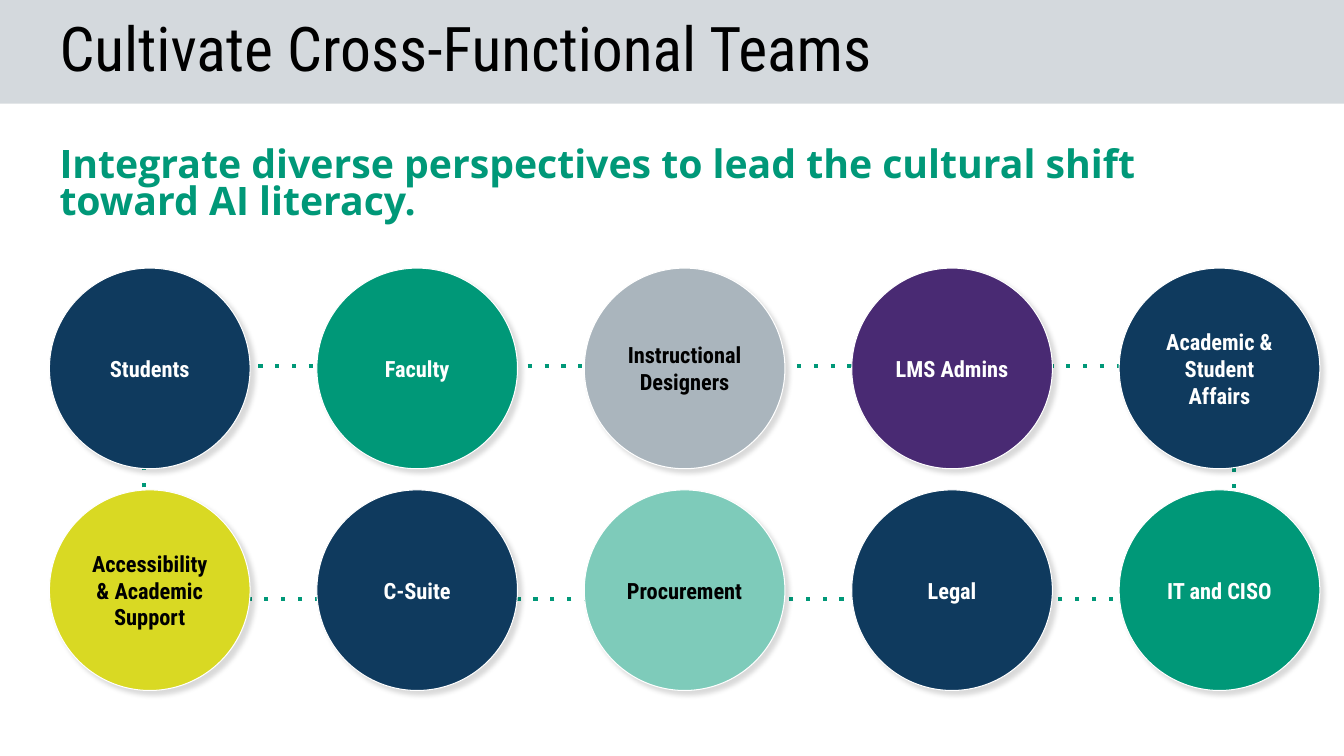
from lxml.etree import SubElement as Sub
from pptx import Presentation
from pptx.dml.color import RGBColor
from pptx.enum.dml import MSO_LINE as Dash
from pptx.enum.shapes import MSO_SHAPE as Kind
from pptx.enum.text import MSO_ANCHOR as Anchor, MSO_AUTO_SIZE as Fit, PP_ALIGN as Align
from pptx.oxml.ns import qn
from pptx.util import Pt

SCALE = 9144
NAVY, GREEN, GRAY, PURPLE = "0F3A5E", "009878", "AAB5BD", "492A73"
LIME, MINT, BLACK, WHITE = "D9D923", "7ECBBA", "000000", "FFFFFF"
HEAD, BODY = "Roboto Condensed", "Open Sans"
TEAMS = [
    [("Students", NAVY, WHITE), ("Faculty", GREEN, WHITE),
     ("Instructional Designers", GRAY, BLACK), ("LMS Admins", PURPLE, WHITE),
     ("Academic & Student Affairs", NAVY, WHITE)],
    [("Accessibility & Academic Support", LIME, BLACK), ("C-Suite", NAVY, WHITE),
     ("Procurement", MINT, BLACK), ("Legal", NAVY, WHITE),
     ("IT and CISO", GREEN, WHITE)],
]


def px(n):
    return round(n * SCALE)


def tint(color, code):
    color.rgb = RGBColor.from_string(code)


def dress(item, looks):
    for name, value in looks.items():
        setattr(item, name, value)


def place(shape, box):
    dress(shape, dict(zip(("left", "top", "width", "height"), map(px, box))))


def write(shape, text, font, size, code, bold, frame, para):
    body = shape.text_frame
    body.text = text
    dress(body, {"word_wrap": True, "auto_size": Fit.NONE, **frame})
    line = body.paragraphs[0]
    dress(line, {"space_before": Pt(0), **para})
    dress(line.font, {"name": font, "size": Pt(size), "bold": bold})
    tint(line.font.color, code)


def draw(slide, kind, box, fill=None, edge=None, width=0):
    shape = slide.shapes.add_shape(kind, *map(px, box))
    shape.shadow.inherit = False
    if fill:
        shape.fill.solid()
        tint(shape.fill.fore_color, fill)
    else:
        shape.fill.background()
    if edge:
        tint(shape.line.color, edge)
        shape.line.width = Pt(width)
    else:
        shape.line.fill.background()
    return shape


def shade(shape):
    glow = shape._element.spPr.find(qn("a:effectLst"))
    cast = Sub(glow, qn("a:outerShdw"), blurRad=str(Pt(3.4)), dist=str(Pt(3.8)),
               dir="2700000", algn="tl", rotWithShape="0")
    hue = Sub(cast, qn("a:srgbClr"), val=BLACK)
    Sub(hue, qn("a:alpha"), val="15000")


def banner(slide, box):
    x, y, w, h = box
    band = draw(slide, Kind.RECTANGLE, box, "D4D9DD")
    slide.shapes._spTree.insert(2, band._element)
    title = slide.shapes.title
    place(title, (x + 49, y + 8, w - 98, h - 16))
    write(title, "Cultivate Cross-Functional Teams", HEAD, 44, BLACK, False,
          {"vertical_anchor": Anchor.MIDDLE},
          {"alignment": Align.LEFT, "line_spacing": 0.9})


def message(slide, box):
    lead = slide.placeholders[1]
    place(lead, box)
    write(lead, "Integrate diverse perspectives to lead the cultural shift toward AI literacy.",
          BODY, 28, GREEN, True, {"vertical_anchor": Anchor.TOP},
          {"alignment": Align.LEFT, "line_spacing": 0.8})


def ring(slide, box):
    x, y, w, h = box
    loop = draw(slide, Kind.RECTANGLE, (x + 94, y + 97, w - 179, h - 188), None, GREEN, 3)
    loop.line.dash_style = Dash.ROUND_DOT
    loop._element.spPr.find(qn("a:ln")).find(qn("a:prstDash")).set("val", "dot")
    size = 199
    across = (w - size) / (len(TEAMS[0]) - 1)
    down = (h - size) / (len(TEAMS) - 1)
    sides = ("left", "top", "right", "bottom")
    frame = {f"margin_{side}": px(10) for side in sides}
    frame["vertical_anchor"] = Anchor.MIDDLE
    for row, teams in enumerate(TEAMS):
        for col, (name, fill, ink) in enumerate(teams):
            spot = (x + col * across, y + row * down, size, size)
            disc = draw(slide, Kind.OVAL, spot, fill, WHITE, 0.75)
            shade(disc)
            write(disc, name, HEAD, 16, ink, True, frame, {"alignment": Align.CENTER})


def main():
    deck = Presentation()
    dress(deck, {"slide_width": px(1333), "slide_height": px(750)})
    slide = deck.slides.add_slide(deck.slide_layouts[0])
    banner(slide, (0, 0, 1333, 103))
    message(slide, (49, 142, 1235, 87))
    ring(slide, (49, 266, 1260, 419))
    deck.save("out.pptx")


if __name__ == "__main__":
    main()
